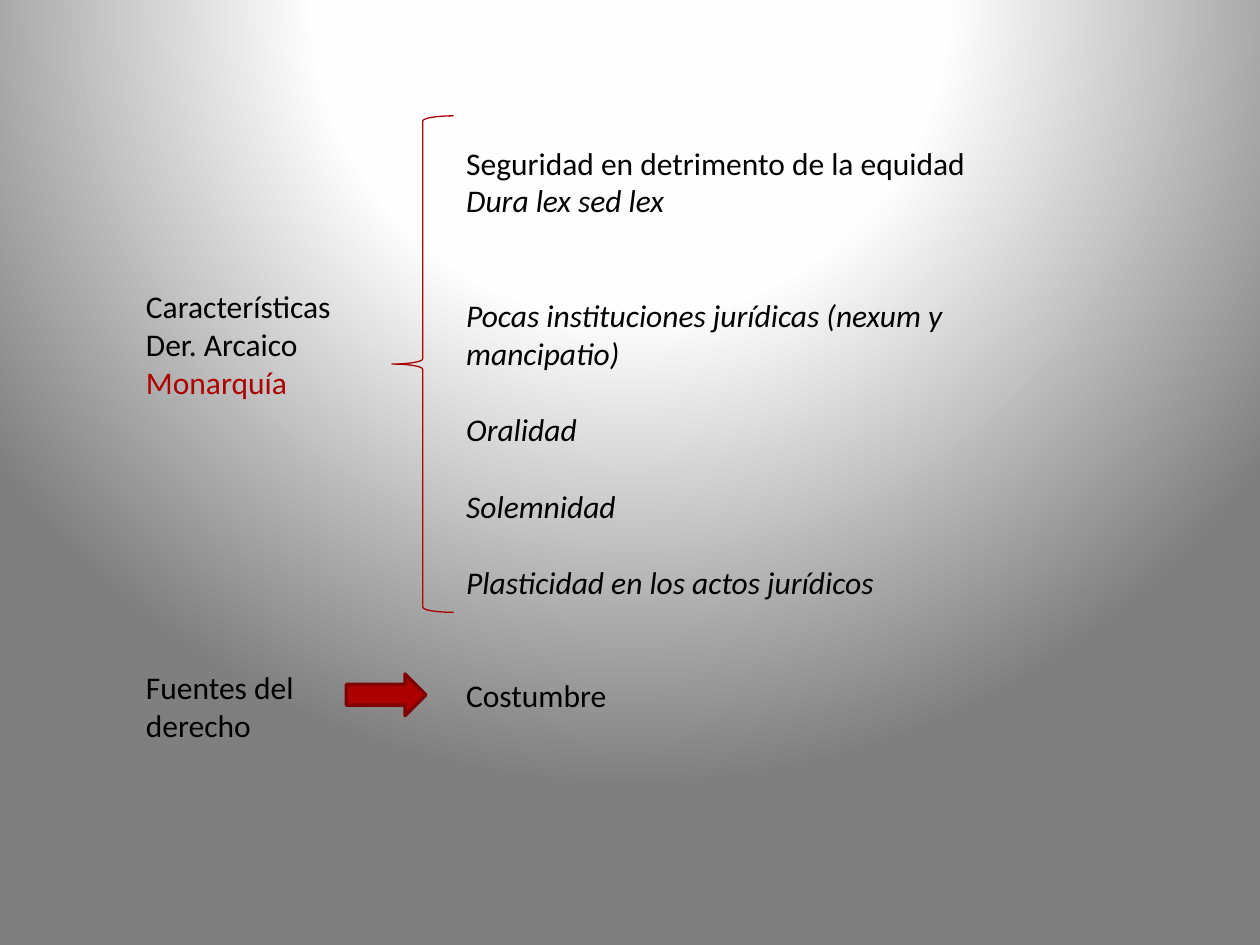
from dataclasses import dataclass
from pptx import Presentation
from pptx.dml.color import RGBColor
from pptx.enum.shapes import MSO_SHAPE as Shape
from pptx.enum.text import MSO_ANCHOR as Anchor, MSO_AUTO_SIZE as AutoSize
from pptx.oxml import parse_xml
from pptx.oxml.ns import nsdecls, qn
from pptx.util import Inches, Pt


@dataclass(frozen=True)
class Theme:
    font: str = "Calibri"
    size: int = 18
    line_gap: int = 22
    ink: str = "000000"
    red: str = "AD0101"
    brace: str = "AA0000"
    arrow_edge: str = "800101"
    glow: tuple = ((0, "FFFFFF"), (40, "FEFEFE"), (100, "7F7F7F"))


theme = Theme()


def write(para, parts):
    for text, color, italic in parts:
        span = para.add_run()
        span.text = text
        span.font.name = theme.font
        span.font.size = Pt(theme.size)
        span.font.italic = italic
        span.font.color.rgb = RGBColor.from_string(color)


def place(box, left, top, width, height):
    box.left, box.top = Inches(left), Inches(top)
    box.width, box.height = Inches(width), Inches(height)
    box.text_frame.word_wrap = True
    box.text_frame.auto_size = AutoSize.NONE
    box.text_frame.vertical_anchor = Anchor.TOP


deck = Presentation()
deck.slide_width, deck.slide_height = Inches(10), Inches(7.5)
page = deck.slides.add_slide(deck.slide_layouts[1])
title = page.shapes.title.element
title.getparent().remove(title)

page.background.fill.gradient()
gradient = page.element.find(".//" + qn("a:gradFill"))
stops = "".join(
    f'<a:gs pos="{position * 1000}"><a:srgbClr val="{color}"/></a:gs>'
    for position, color in theme.glow
)
gradient.getparent().replace(gradient, parse_xml(
    f'<a:gradFill {nsdecls("a")} rotWithShape="1"><a:gsLst>{stops}</a:gsLst>'
    '<a:path path="circle"><a:fillToRect l="50000" t="-80000" r="50000" b="180000"/>'
    "</a:path></a:gradFill>"
))

traits = [
    (0, [("Seguridad en detrimento de la equidad ", theme.ink, False),
         ("Dura lex sed lex", theme.ink, True)]),
    (2, [("Pocas instituciones jurídicas (nexum y mancipatio)", theme.ink, True)]),
    (1, [("Oralidad", theme.ink, True)]),
    (1, [("Solemnidad", theme.ink, True)]),
    (1, [("Plasticidad en los actos jurídicos", theme.ink, True)]),
]
body = page.placeholders[1]
place(body, 3.6, 1.09, 4.17, 4.04)
for index, (gaps, parts) in enumerate(traits):
    frame = body.text_frame
    para = frame.add_paragraph() if index else frame.paragraphs[0]
    para.space_before = Pt(gaps * theme.line_gap)
    properties = para._p.get_or_add_pPr()
    properties.set("marL", "0")
    properties.set("indent", "0")
    properties.append(parse_xml(f'<a:buNone {nsdecls("a")}/>'))
    write(para, parts)

labels = [
    ((1.06, 2.23, 2.05, 1.01), [
        [("Características", theme.ink, False)],
        [("Der. Arcaico ", theme.ink, False), ("Monarquía", theme.red, False)],
    ]),
    ((1.06, 5.25, 2.05, 0.71), [[("Fuentes del derecho", theme.ink, False)]]),
    ((3.6, 5.32, 1.79, 0.4), [[("Costumbre", theme.ink, False)]]),
]
for bounds, lines in labels:
    box = page.shapes.add_textbox(*map(Inches, bounds))
    place(box, *bounds)
    for index, parts in enumerate(lines):
        frame = box.text_frame
        write(frame.add_paragraph() if index else frame.paragraphs[0], parts)

marks = [
    (Shape.LEFT_BRACE, (3.11, 0.92, 0.49, 3.94), None, theme.brace, 0.75),
    (Shape.RIGHT_ARROW, (2.75, 5.35, 0.63, 0.33), theme.red, theme.arrow_edge, 2),
]
for kind, bounds, fill, line, weight in marks:
    mark = page.shapes.add_shape(kind, *map(Inches, bounds))
    mark.shadow.inherit = False
    if fill:
        mark.fill.solid()
        mark.fill.fore_color.rgb = RGBColor.from_string(fill)
    else:
        mark.fill.background()
    mark.line.color.rgb = RGBColor.from_string(line)
    mark.line.width = Pt(weight)

deck.save("out.pptx")
